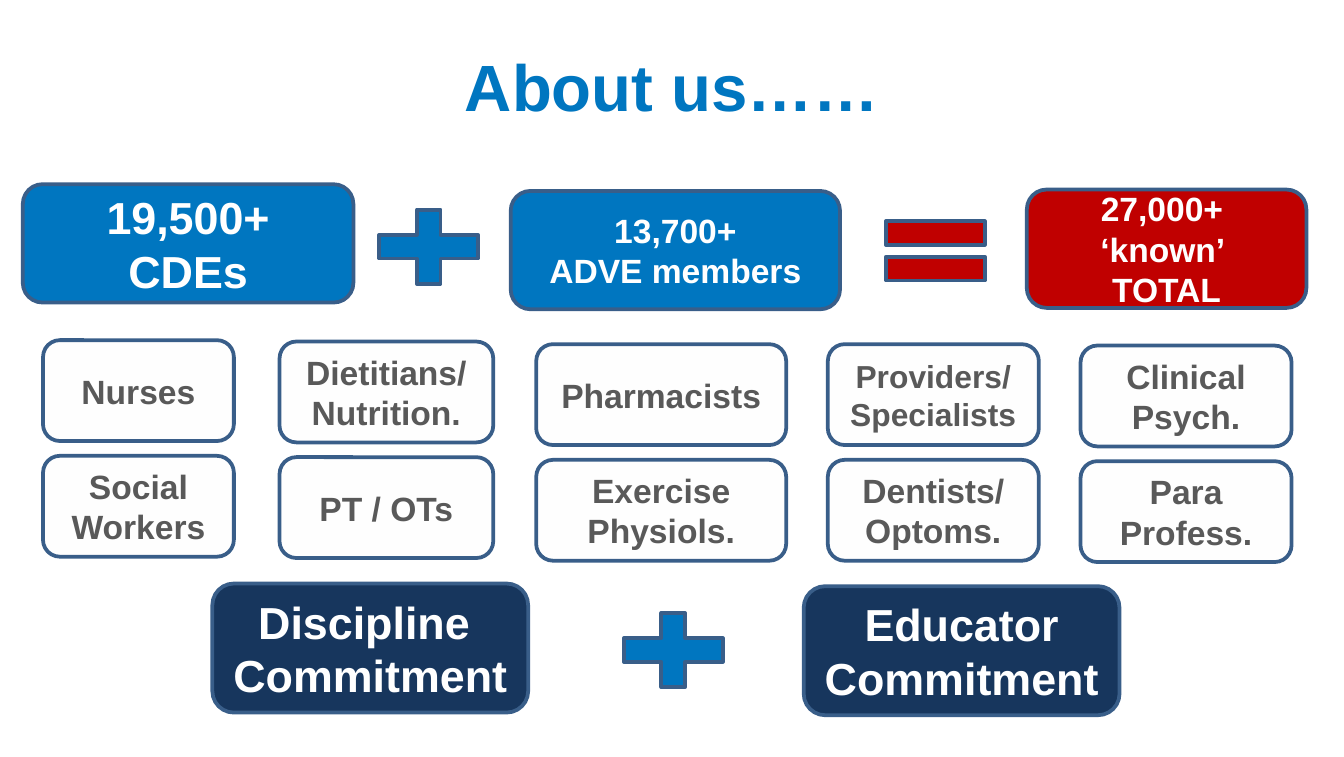
from dataclasses import dataclass

from pptx import Presentation
from pptx.dml.color import RGBColor
from pptx.enum.shapes import MSO_SHAPE as Shape
from pptx.enum.text import MSO_ANCHOR as Anchor, PP_ALIGN as Align
from pptx.util import Inches, Pt


@dataclass(frozen=True)
class Theme:
    font: str = "Arial"
    blue: str = "0076C0"
    red: str = "C00000"
    navy: str = "17365D"
    pale: str = "FEFEFE"
    white: str = "FFFFFF"
    gray: str = "595959"
    outline: str = "395E89"
    line_width: int = 2
    title: int = 35
    large: int = 24
    body: int = 18
    compact: int = 17


THEME = Theme()
WIDTH, HEIGHT = 10, 5.63

TITLE = "About us……"

# Text, fill, type size, (left, top, width, height)
HEADLINES = [
    ("19,500+ CDEs", THEME.blue, THEME.large, (0.17, 1.37, 2.46, 0.88)),
    ("13,700+\nADVE members", THEME.blue, THEME.body, (3.8, 1.42, 2.45, 0.88)),
    ("27,000+ \n‘known’ \nTOTAL", THEME.red, THEME.body, (7.64, 1.41, 2.08, 0.88)),
    ("Discipline \nCommitment ", THEME.navy, THEME.large, (1.58, 4.34, 2.35, 0.96)),
    ("Educator Commitment ", THEME.navy, THEME.large, (5.98, 4.36, 2.35, 0.96)),
]

# Preset, fill, (left, top)
OPERATORS = [
    (Shape.MATH_PLUS, THEME.blue, (2.69, 1.46)),
    (Shape.MATH_EQUAL, THEME.red, (6.46, 1.49)),
    (Shape.MATH_PLUS, THEME.blue, (4.51, 4.46)),
]
OPERATOR_SIZE = (1, 0.75)

# Left, top, width, then the professions from top to bottom
PROFESSION_COLUMNS = [
    (0.32, 2.53, 1.42, ["Nurses", "Social Workers"]),
    (2.08, 2.54, 1.59, ["Dietitians/Nutrition.", "PT / OTs"]),
    (3.99, 2.56, 1.86, ["Pharmacists", "Exercise Physiols."]),
    (6.16, 2.56, 1.57, ["Providers/ Specialists", "Dentists/ Optoms."]),
    (8.04, 2.57, 1.57, ["Clinical Psych.", "Para Profess."]),
]
PROFESSION_HEIGHT, ROW_PITCH = 0.75, 0.86
COMPACT_TEXTS = {"Providers/ Specialists"}


def write(box, text, size, color):
    frame = box.text_frame
    frame.word_wrap = True
    frame.vertical_anchor = Anchor.MIDDLE
    frame.text = text
    for para in frame.paragraphs:
        para.alignment = Align.CENTER
        for span in para.runs:
            span.font.name = THEME.font
            span.font.size = Pt(size)
            span.font.bold = True
            span.font.color.rgb = RGBColor.from_string(color)


def add_outlined(page, preset, fill, area):
    box = page.shapes.add_shape(preset, *map(Inches, area))
    box.shadow.inherit = False
    box.fill.solid()
    box.fill.fore_color.rgb = RGBColor.from_string(fill)
    box.line.color.rgb = RGBColor.from_string(THEME.outline)
    box.line.width = Pt(THEME.line_width)
    return box


def add_card(page, text, fill, size, color, area):
    box = add_outlined(page, Shape.ROUNDED_RECTANGLE, fill, area)
    write(box, text, size, color)


def main():
    deck = Presentation()
    deck.slide_width, deck.slide_height = Inches(WIDTH), Inches(HEIGHT)
    page = deck.slides.add_slide(deck.slide_layouts[6])

    title = page.shapes.add_textbox(*map(Inches, (0.5, 0.37, WIDTH - 1, 0.53)))
    write(title, TITLE, THEME.title, THEME.blue)

    for left, top, width, professions in PROFESSION_COLUMNS:
        for row, text in enumerate(professions):
            size = THEME.compact if text in COMPACT_TEXTS else THEME.body
            area = (left, top + row * ROW_PITCH, width, PROFESSION_HEIGHT)
            add_card(page, text, THEME.pale, size, THEME.gray, area)

    for text, fill, size, area in HEADLINES:
        add_card(page, text, fill, size, THEME.white, area)

    for preset, fill, corner in OPERATORS:
        add_outlined(page, preset, fill, corner + OPERATOR_SIZE)

    deck.save("out.pptx")


if __name__ == "__main__":
    main()
